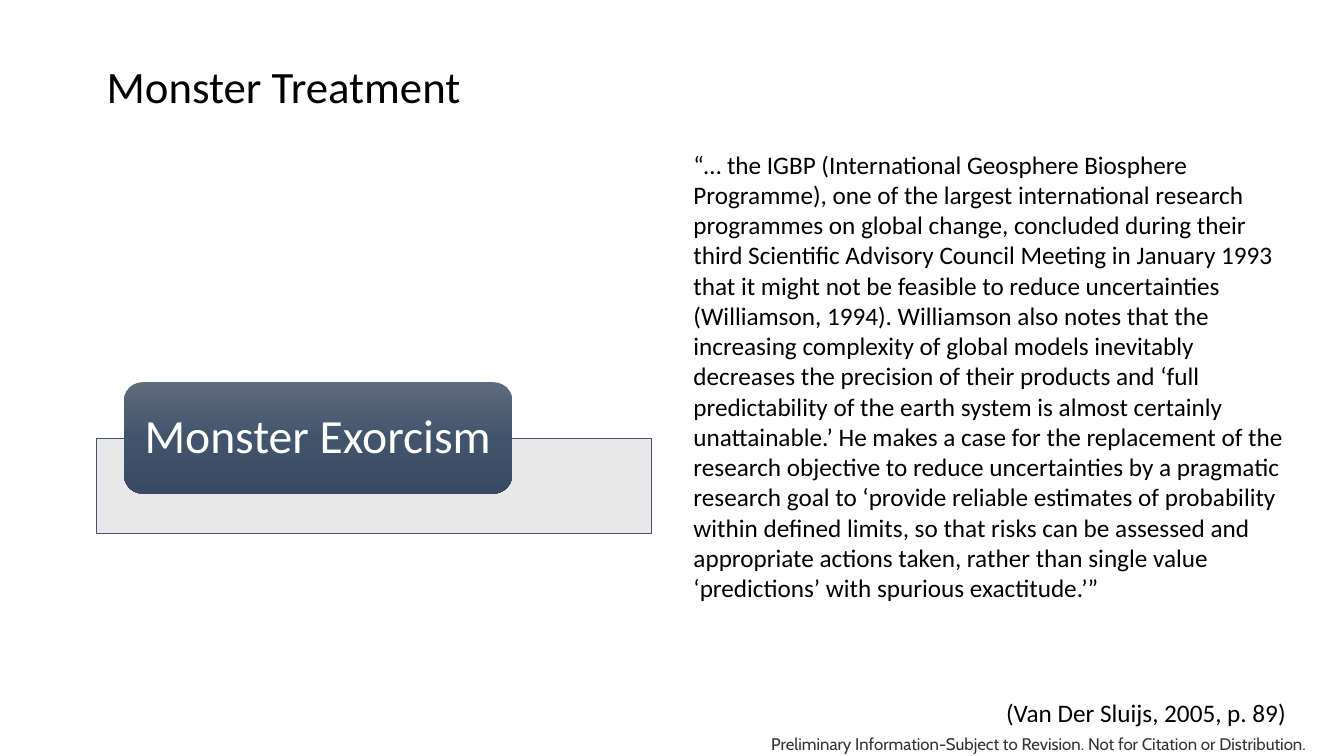
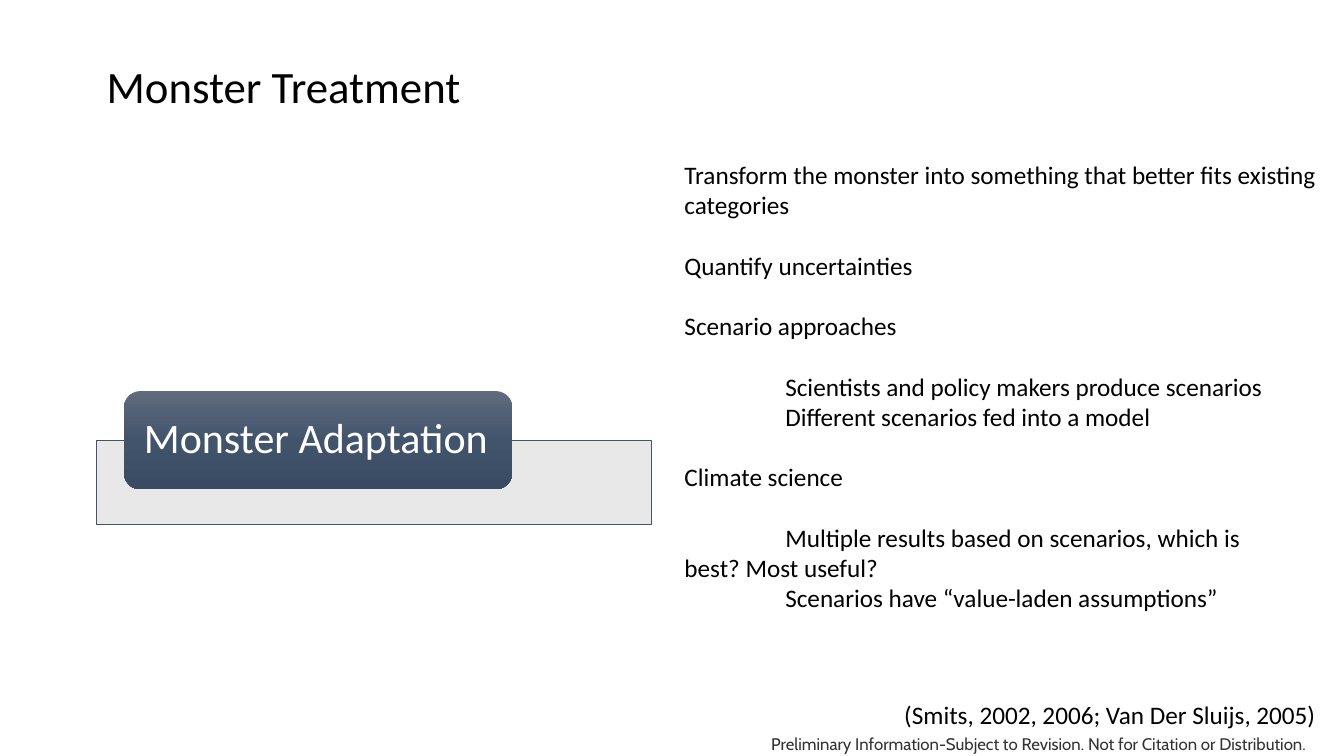
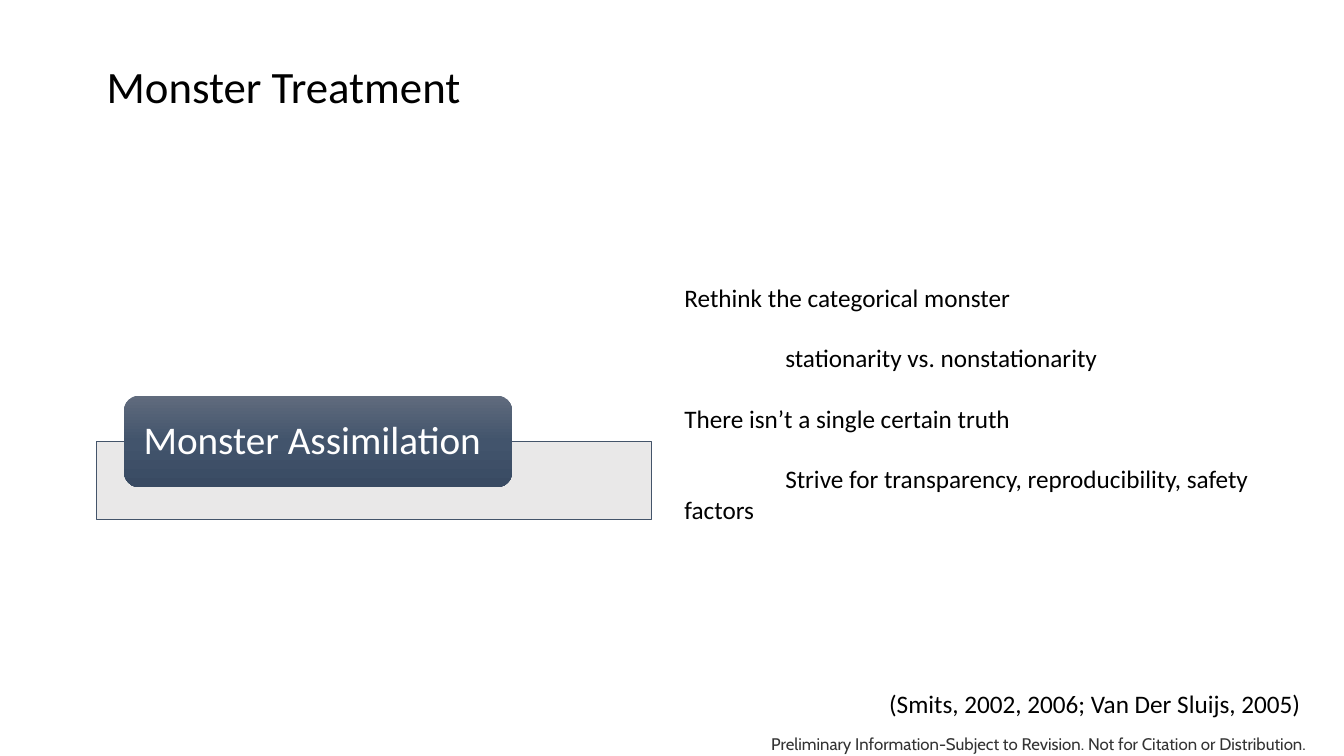
from copy import deepcopy
from dataclasses import dataclass

from lxml import etree
from pptx import Presentation
from pptx.dml.color import RGBColor
from pptx.enum.shapes import MSO_SHAPE
from pptx.enum.text import MSO_ANCHOR, PP_ALIGN
from pptx.oxml.ns import qn
from pptx.util import Inches, Pt

RECTANGLE = MSO_SHAPE.RECTANGLE
ROUNDED = MSO_SHAPE.ROUNDED_RECTANGLE
MIDDLE = MSO_ANCHOR.MIDDLE
LEFT = PP_ALIGN.LEFT

# Shared style
SLIDE_WIDTH, SLIDE_HEIGHT = 13.33, 7.5
BODY_FONT, FOOTER_FONT = "Calibri", "Cabin"
BLACK, WHITE, FOOTER_GREY = "000000", "FFFFFF", "333333"
BAND_FILL, BAND_LINE, BAND_OPACITY = "E7E6E6", "44546A", 90
TAB_GRADIENT = ((0, "606B7D"), (0.5, "42546C"), (1, "394A62"))
BODY_SIZE = 18
BLANK_LINE = 21.6
TITLE = "Monster Treatment"
FOOTER = "Preliminary Information-Subject to Revision. Not for Citation or Distribution."

# Treatment panel: heights follow the label size, the tab straddles the band's top edge
PANEL_LEFT, PANEL_WIDTH, PANEL_CENTRE = 0.96, 5.5, 4.54
TAB_LEFT, TAB_WIDTH, TAB_TO_BAND = 1.23, 3.85, 1.17
LABEL_POINTS_PER_INCH = 36


@dataclass(frozen=True)
class Line:
    text: str
    gap: bool = False
    indent: bool = False


@dataclass(frozen=True)
class Area:
    left: float
    top: float
    width: float
    height: float

    def inches(self) -> tuple:
        return tuple(Inches(v) for v in (self.left, self.top, self.width, self.height))


@dataclass(frozen=True)
class Treatment:
    label: str
    label_size: int
    body: Area
    lines: tuple[Line, ...]
    citation: str
    citation_left: float
    citation_top: float


TREATMENTS = (
    Treatment(
        "Monster Exorcism", 34, Area(6.78, 1.43, 6.2, 4.64),
        (Line(
            "“… the IGBP (International Geosphere Biosphere Programme), one of the largest "
            "international research programmes on global change, concluded during their third "
            "Scientific Advisory Council Meeting in January 1993 that it might not be feasible "
            "to reduce uncertainties (Williamson, 1994). Williamson also notes that the "
            "increasing complexity of global models inevitably decreases the precision of their "
            "products and ‘full predictability of the earth system is almost certainly "
            "unattainable.’ He makes a case for the replacement of the research objective to "
            "reduce uncertainties by a pragmatic research goal to ‘provide reliable estimates of "
            "probability within defined limits, so that risks can be assessed and appropriate "
            "actions taken, rather than single value ‘predictions’ with spurious exactitude.’”"),),
        "(Van Der Sluijs, 2005, p. 89)", 9.88, 6.85),
    Treatment(
        "Monster Adaptation", 30, Area(6.69, 1.53, 6.55, 4.64),
        (Line("Transform the monster into something that better fits existing categories"),
         Line("Quantify uncertainties", gap=True),
         Line("Scenario approaches", gap=True),
         Line("Scientists and policy makers produce scenarios", gap=True, indent=True),
         Line("Different scenarios fed into a model", indent=True),
         Line("Climate science", gap=True),
         Line("Multiple results based on scenarios, which is\vbest? Most useful?",
              gap=True, indent=True),
         Line("Scenarios have “value-laden assumptions”", indent=True)),
        "(Smits, 2002, 2006; Van Der Sluijs, 2005)", 8.87, 6.87),
    Treatment(
        "Monster Assimilation", 28, Area(6.69, 2.75, 6.2, 2.83),
        (Line("Rethink the categorical monster"),
         Line("stationarity vs. nonstationarity", gap=True, indent=True),
         Line("There isn’t a single certain truth", gap=True),
         Line("Strive for transparency, reproducibility, safety factors",
              gap=True, indent=True)),
        "(Smits, 2002, 2006; Van Der Sluijs, 2005)", 8.72, 6.76),
)


def colour(value: str) -> RGBColor:
    return RGBColor.from_string(value)


def write(frame, lines: tuple[Line, ...], size: int, ink: str = BLACK,
          font: str = BODY_FONT, spacing: float = 1.0) -> None:
    """Fill a text frame with left-aligned lines in one style."""
    frame.word_wrap = True
    for number, line in enumerate(lines):
        para = frame.add_paragraph() if number else frame.paragraphs[0]
        para.text = line.text
        para.alignment = LEFT
        para.line_spacing = spacing
        if line.gap:
            para.space_before = Pt(BLANK_LINE)
        if line.indent:
            para._p.get_or_add_pPr().set("indent", str(Inches(1)))
        for span in para.runs:
            span.font.size = Pt(size)
            span.font.name = font
            span.font.color.rgb = colour(ink)


def add_text(page, area: Area, lines: tuple[Line, ...], size: int, **style):
    box = page.shapes.add_textbox(*area.inches())
    write(box.text_frame, lines, size, **style)
    return box


def add_panel(page, label: str, size: int) -> None:
    band_height = size / LABEL_POINTS_PER_INCH
    tab_height = band_height * TAB_TO_BAND
    band_top = PANEL_CENTRE - (band_height - tab_height / 2) / 2

    # Translucent band
    band_area = Area(PANEL_LEFT, band_top, PANEL_WIDTH, band_height)
    band = page.shapes.add_shape(RECTANGLE, *band_area.inches())
    band.shadow.inherit = False
    band.fill.solid()
    band.fill.fore_color.rgb = colour(BAND_FILL)
    fill_colour = band._element.spPr.find(qn("a:solidFill"))[0]
    etree.SubElement(fill_colour, qn("a:alpha")).set("val", str(BAND_OPACITY * 1000))
    band.line.color.rgb = colour(BAND_LINE)
    band.line.width = Pt(0.5)

    # Gradient tab with its label
    tab_area = Area(TAB_LEFT, band_top - tab_height / 2, TAB_WIDTH, tab_height)
    tab = page.shapes.add_shape(ROUNDED, *tab_area.inches())
    tab.shadow.inherit = False
    tab.line.fill.background()
    tab.fill.gradient()
    tab.fill.gradient_angle = 270
    stop_list = tab._element.spPr.find(".//" + qn("a:gsLst"))
    stop_list.append(deepcopy(stop_list[0]))
    for stop, (position, shade) in zip(tab.fill.gradient_stops, TAB_GRADIENT):
        stop.position = position
        stop.color.rgb = colour(shade)
    frame = tab.text_frame
    frame.margin_left = frame.margin_right = Inches(0.15)
    frame.margin_top = frame.margin_bottom = 0
    frame.vertical_anchor = MIDDLE
    write(frame, (Line(label),), size, ink=WHITE, spacing=0.9)


def add_treatment(deck, treatment: Treatment) -> None:
    page = deck.slides.add_slide(deck.slide_layouts[6])

    # Footer and title
    add_text(page, Area(7.55, 7.23, 5.62, 0.3), (Line(FOOTER),), 12,
             ink=FOOTER_GREY, font=FOOTER_FONT)
    title = add_text(page, Area(0.96, 0.33, 11.46, 1.1), (Line(TITLE),), 32, spacing=0.9)
    title.text_frame.vertical_anchor = MIDDLE

    # Panel, citation and body
    add_panel(page, treatment.label, treatment.label_size)
    citation_area = Area(treatment.citation_left, treatment.citation_top,
                         SLIDE_WIDTH - treatment.citation_left, 0.41)
    add_text(page, citation_area, (Line(treatment.citation),), BODY_SIZE, spacing=1.07)
    add_text(page, treatment.body, treatment.lines, BODY_SIZE)


def main() -> None:
    deck = Presentation()
    deck.slide_width = Inches(SLIDE_WIDTH)
    deck.slide_height = Inches(SLIDE_HEIGHT)
    for treatment in TREATMENTS:
        add_treatment(deck, treatment)
    deck.save("out.pptx")


if __name__ == "__main__":
    main()
